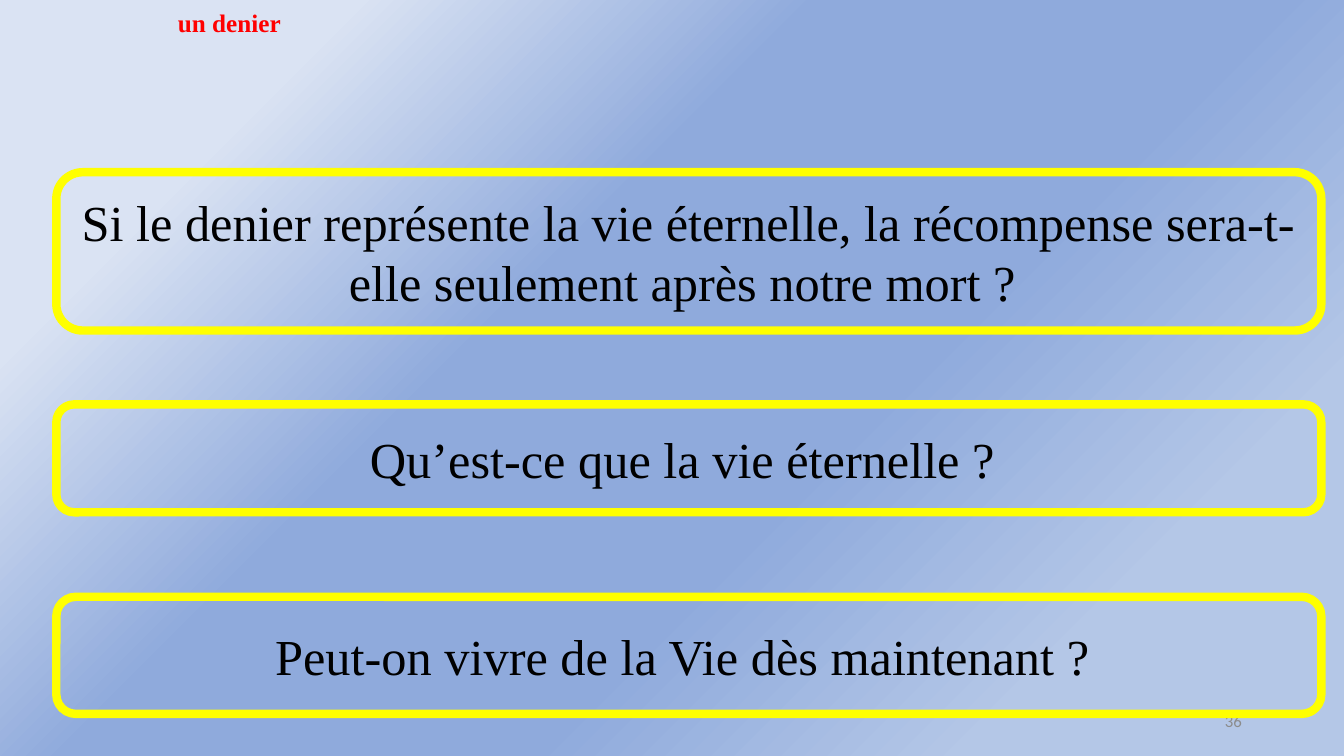
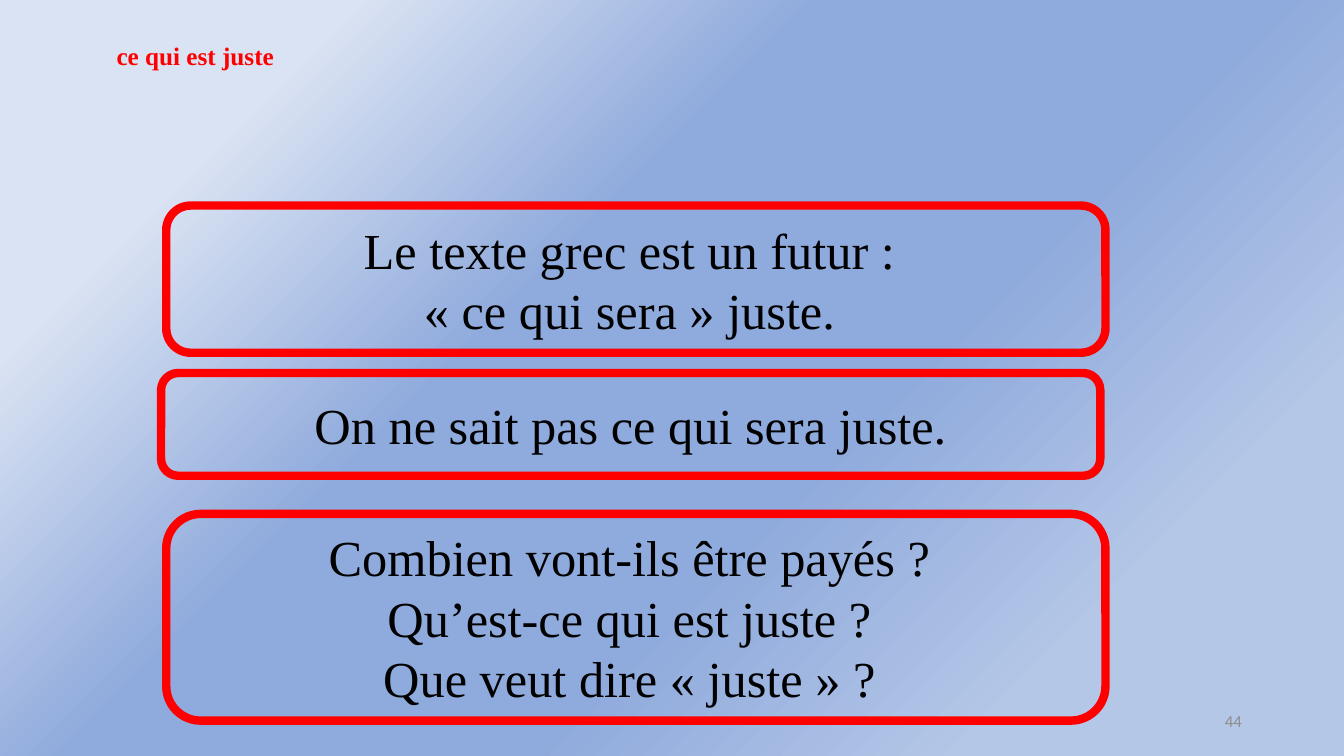
from dataclasses import dataclass

from lxml import etree
from pptx import Presentation
from pptx.dml.color import RGBColor
from pptx.enum.shapes import MSO_SHAPE
from pptx.enum.text import MSO_ANCHOR, MSO_AUTO_SIZE, PP_ALIGN
from pptx.oxml.ns import qn
from pptx.util import Cm, Pt

ROUND = MSO_SHAPE.ROUNDED_RECTANGLE
TOP, MIDDLE = MSO_ANCHOR.TOP, MSO_ANCHOR.MIDDLE
CENTER, RIGHT = PP_ALIGN.CENTER, PP_ALIGN.RIGHT
FIT = MSO_AUTO_SIZE.SHAPE_TO_FIT_TEXT
TITLE_ONLY = 5


@dataclass(frozen=True)
class Theme:
    serif: str = "Times New Roman"
    sans: str = "Calibri"
    ink: str = "000000"
    red: str = "FF0000"
    yellow: str = "FFFF00"
    gray: str = "8C8C8C"
    body: int = 36
    title: int = 18
    small: int = 12
    border: int = 6
    # Background stops: percent and colour
    stops: tuple = ((18, "B4C7E7"), (39, "8FAADC"), (61, "8FAADC"), (83, "DAE3F3"))
    angle: int = 135


class Deck:
    def __init__(self, theme):
        self.theme = theme
        self.prs = Presentation()
        self.prs.slide_width, self.prs.slide_height = Cm(33.87), Cm(19.05)
        self.slide = None
        self.paint()

    def paint(self):
        """Give the master the diagonal gradient."""
        master = self.prs.slide_master
        fill = master.background.fill
        fill.gradient()
        fill.gradient_angle = self.theme.angle
        stops = master.element.find(".//" + qn("a:gsLst"))
        for stop in list(stops):
            stops.remove(stop)
        for place, color in self.theme.stops:
            stop = etree.SubElement(stops, qn("a:gs"), pos=str(place * 1000))
            etree.SubElement(stop, qn("a:srgbClr"), val=color)

    def set_text(self, shape, lines, size, color, font, align=CENTER, anchor=MIDDLE, bold=False):
        frame = shape.text_frame
        frame.word_wrap = True
        frame.vertical_anchor = anchor
        frame.text = "\n".join(lines)
        for para in frame.paragraphs:
            para.alignment = align
            para.font.name = font
            para.font.size = Pt(size)
            para.font.bold = bold
            para.font.color.rgb = RGBColor.from_string(color)

    def start(self, title, left, top, number):
        """Add a slide with its title and number."""
        look = self.theme
        self.slide = self.prs.slides.add_slide(self.prs.slide_layouts[TITLE_ONLY])
        head = self.slide.shapes.title
        head.left, head.top, head.width, head.height = Cm(left), Cm(top), Cm(11.56), Cm(1.02)
        self.set_text(head, [title], look.title, look.red, look.serif, anchor=TOP, bold=True)
        head.text_frame.auto_size = FIT
        self.label(number)

    def label(self, number):
        look = self.theme
        box = self.slide.shapes.add_textbox(Cm(23.93), Cm(17.65), Cm(7.62), Cm(1.02))
        self.set_text(box, [number], look.small, look.gray, look.sans, align=RIGHT)

    def frame(self, lines, left, top, width, height, color):
        """Add a rounded outline around centred text."""
        look = self.theme
        box = self.slide.shapes.add_shape(ROUND, Cm(left), Cm(top), Cm(width), Cm(height))
        box.shadow.inherit = False
        box.fill.background()
        box.line.color.rgb = RGBColor.from_string(color)
        box.line.width = Pt(look.border)
        self.set_text(box, lines, look.body, look.ink, look.serif)


def main():
    theme = Theme()
    deck = Deck(theme)

    # Slide: the denarius
    deck.start("un denier", 0, 0.05, "36")
    for text, top, height in (
        ("Si le denier représente la vie éternelle, la récompense "
         "sera-t-elle seulement après notre mort ? ", 4.34, 3.99),
        ("Qu’est-ce que la vie éternelle ? ", 10.19, 2.72),
        ("Peut-on vivre de la Vie dès maintenant ? ", 15.04, 2.95),
    ):
        deck.frame([text], 1.42, top, 31.88, height, theme.yellow)

    # Slide: what is fair
    deck.start("ce qui est juste", -0.86, 0.89, "44")
    for lines, left, top, height in (
        (["Le texte grec est un futur : ", "« ce qui sera » juste. "], 4.19, 5.18, 3.71),
        (["On ne sait pas ce qui sera juste."], 4.06, 9.4, 2.59),
        (["Combien vont-ils être payés ? ", "Qu’est-ce qui est juste ? ",
          "Que veut dire « juste » ? "], 4.19, 12.95, 5.21),
    ):
        deck.frame(lines, left, top, 23.67, height, theme.red)

    deck.prs.save("out.pptx")


if __name__ == "__main__":
    main()
